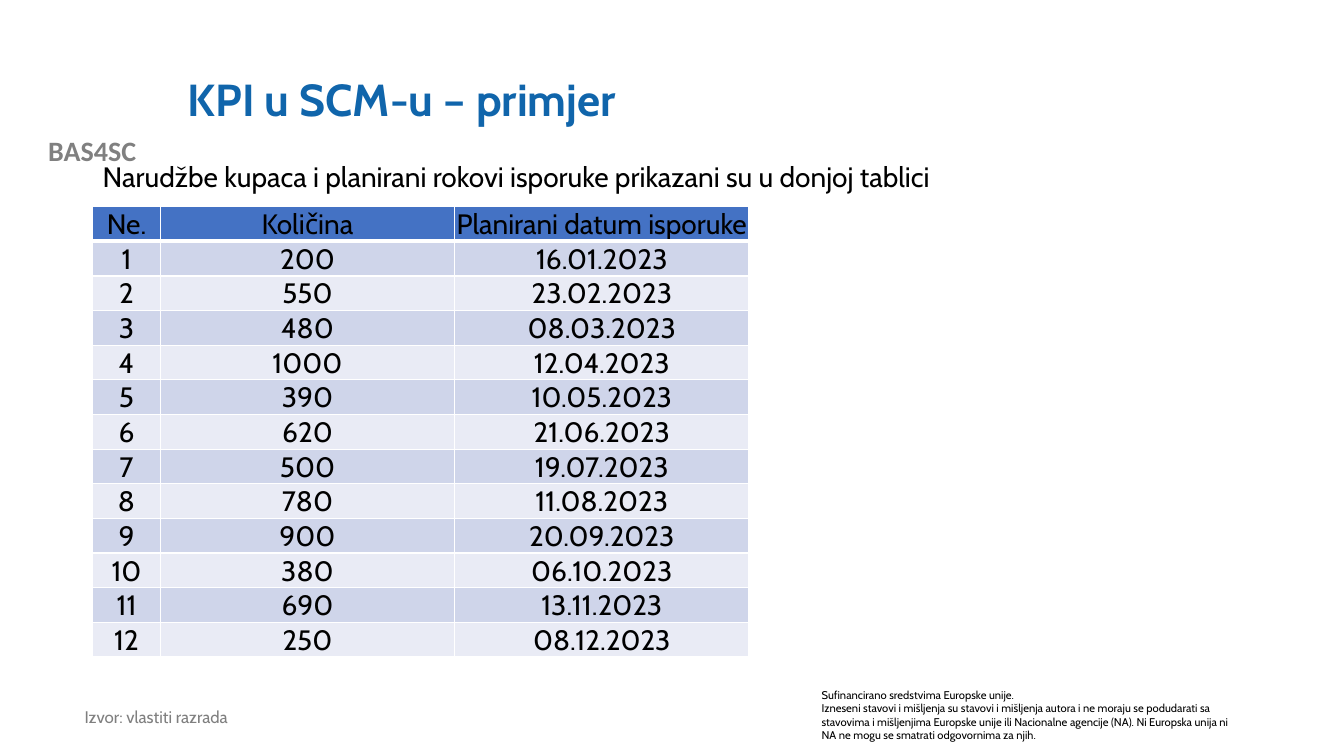
from lxml import etree
from pptx import Presentation, util as u
from pptx.dml.color import RGBColor
from pptx.enum import text
from pptx.oxml.ns import qn

COLORS = {
    "title": "1065AB", "ink": "000000", "project": "808080", "source": "7F7F7F",
    "header": "4472C4", "odd": "CFD5EA", "even": "E9EBF5", "border": "FFFFFF",
}
FONT = "Cabin"
HEADINGS = ("Ne.", "Količina", "Planirani datum isporuke")
ORDERS = (
    (200, "16.01.2023"), (550, "23.02.2023"), (480, "08.03.2023"),
    (1000, "12.04.2023"), (390, "10.05.2023"), (620, "21.06.2023"),
    (500, "19.07.2023"), (780, "11.08.2023"), (900, "20.09.2023"),
    (380, "06.10.2023"), (690, "13.11.2023"), (250, "08.12.2023"),
)
DISCLAIMER = (
    "Sufinancirano sredstvima Europske unije.",
    "Izneseni stavovi i mišljenja su stavovi i mišljenja autora i ne moraju se "
    "podudarati sa stavovima i mišljenjima Europske unije ili Nacionalne agencije "
    "(NA). Ni Europska unija ni NA ne mogu se smatrati odgovornima za njih.",
)


def write(paragraph, words, size, color="ink", font=FONT, bold=False,
          align=text.PP_ALIGN.LEFT, spacing=None):
    paragraph.alignment = align
    paragraph.line_spacing = spacing
    run = paragraph.add_run()
    run.text = words
    run.font.name = font
    run.font.size = u.Pt(size)
    run.font.bold = bold
    run.font.color.rgb = RGBColor.from_string(COLORS[color])


def add_text(slide, box, lines, size, **style):
    shape = slide.shapes.add_textbox(*map(u.Inches, box))
    frame = shape.text_frame
    frame.word_wrap = True
    for index, line in enumerate(lines):
        paragraph = frame.add_paragraph() if index else frame.paragraphs[0]
        write(paragraph, line, size, **style)


def set_title(slide, box, words):
    title = slide.shapes.title
    title.left, title.top, title.width, title.height = map(u.Inches, box)
    frame = title.text_frame
    frame.auto_size = text.MSO_AUTO_SIZE.NONE
    frame.vertical_anchor = text.MSO_ANCHOR.MIDDLE
    write(frame.paragraphs[0], words, 32, color="title", bold=True, spacing=0.9)


def set_borders(cell, widths):
    """Draw the cell's left, right, top and bottom lines, with widths in points."""
    properties = cell._tc.get_or_add_tcPr()
    for index, (side, width) in enumerate(zip("LRTB", widths)):
        line = etree.Element(qn(f"a:ln{side}"), w=str(u.Pt(width)))
        fill = etree.SubElement(line, qn("a:solidFill"))
        etree.SubElement(fill, qn("a:srgbClr"), val=COLORS["border"])
        properties.insert(index, line)


def fill_cell(cell, words, color):
    cell.margin_left = cell.margin_top = cell.margin_right = u.Inches(0.01)
    cell.margin_bottom = 0
    cell.vertical_anchor = text.MSO_ANCHOR.MIDDLE
    cell.fill.solid()
    cell.fill.fore_color.rgb = RGBColor.from_string(COLORS[color])
    write(cell.text_frame.paragraphs[0], words, 20, align=text.PP_ALIGN.CENTER)


def add_orders_table(slide, box):
    rows = [HEADINGS] + [
        (str(number), str(quantity), date)
        for number, (quantity, date) in enumerate(ORDERS, 1)
    ]
    left, top, width, height = map(u.Inches, box)
    table = slide.shapes.add_table(
        len(rows), len(HEADINGS), left, top, width, height).table
    number_width = u.Inches(0.67)
    table.columns[0].width = number_width
    for column in (1, 2):
        table.columns[column].width = (width - number_width) // 2
    for row, values in enumerate(rows):
        color = "header" if row == 0 else ("odd" if row % 2 else "even")
        widths = (1, 1, 3 if row == 1 else 1, 3 if row == 0 else 1)
        for column, words in enumerate(values):
            cell = table.cell(row, column)
            fill_cell(cell, words, color)
            set_borders(cell, widths)


def add_footer(slide, box):
    left, top, width, height = box
    add_text(slide, (left, top + 0.2, 5.01, 0.52), ["Izvor: vlastiti razrada"],
             12, color="source", spacing=0.9)
    add_text(slide, (left + width - 4.37, top, 4.37, height), DISCLAIMER, 8)


def main():
    presentation = Presentation()
    presentation.slide_width = u.Inches(13.33)
    presentation.slide_height = u.Inches(7.5)
    slide = presentation.slides.add_slide(presentation.slide_layouts[5])
    add_text(slide, (0, 1.28, 1.83, 0.44), ["BAS4SC"], 20, color="project",
             font="Calibri", bold=True, align=text.PP_ALIGN.CENTER)
    set_title(slide, (1.76, 0.4, 10.66, 1.22), "KPI u SCM-u – primjer")
    add_text(slide, (0.92, 1.57, 11.98, 1.14),
             ["Narudžbe kupaca i planirani rokovi isporuke prikazani su u donjoj tablici"],
             20, align=text.PP_ALIGN.JUSTIFY, spacing=0.9)
    add_orders_table(slide, (0.92, 2.05, 6.51, 4.42))
    add_footer(slide, (0.74, 6.78, 11.68, 0.64))
    presentation.save("out.pptx")


if __name__ == "__main__":
    main()
